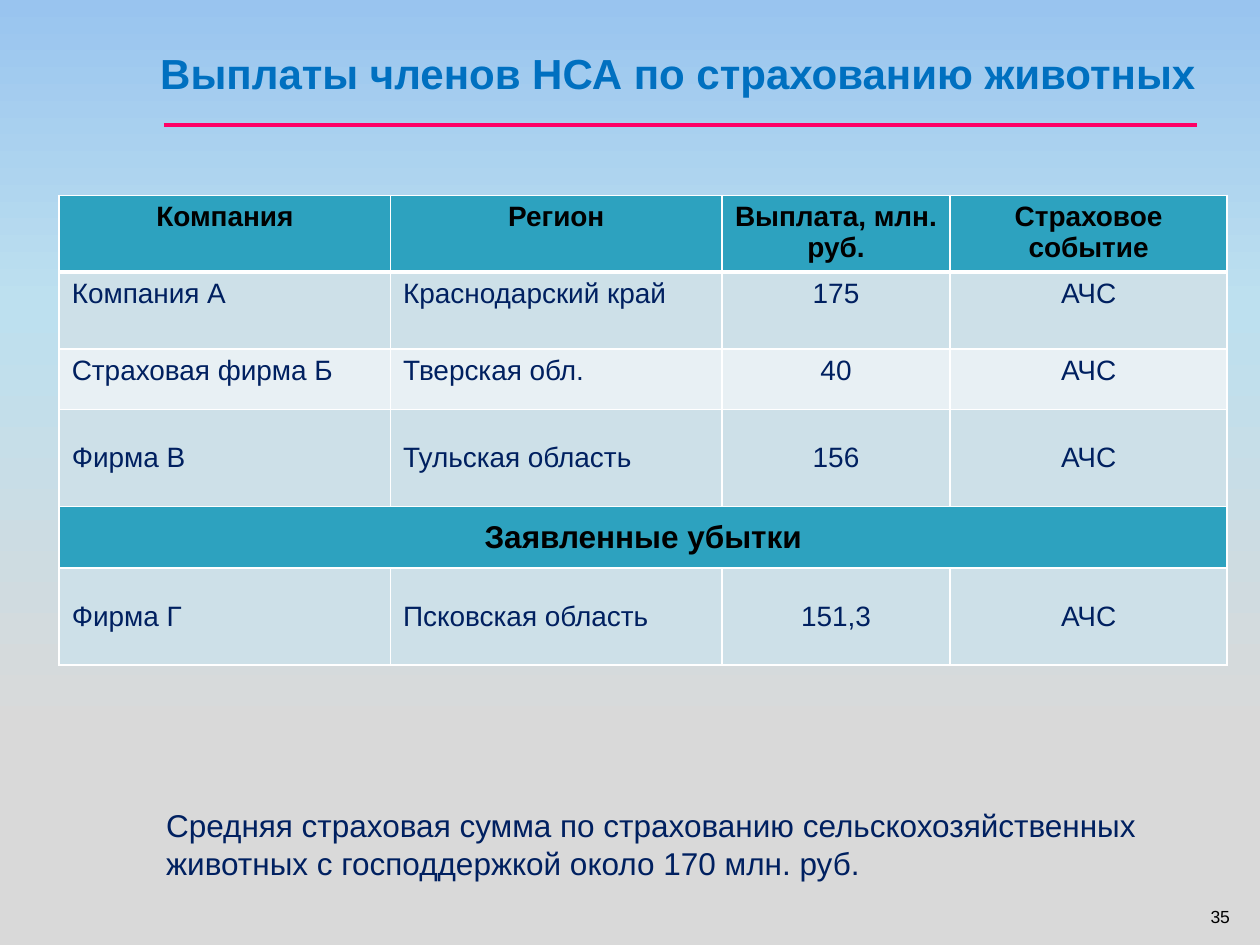
from copy import deepcopy

from lxml import etree
from pptx import Presentation
from pptx.dml.color import RGBColor
from pptx.enum import shapes, text
from pptx.oxml import ns
from pptx.util import Inches, Pt

FONT = "Arial"
BLACK = RGBColor(0x00, 0x00, 0x00)
WHITE = RGBColor(0xFF, 0xFF, 0xFF)
NAVY = RGBColor(0x00, 0x20, 0x60)
BLUE = RGBColor(0x00, 0x70, 0xC0)
PINK = RGBColor(0xFF, 0x00, 0x66)
TEAL = RGBColor(0x2D, 0xA2, 0xBF)
BAND_DARK = RGBColor(0xCD, 0xE0, 0xE8)
BAND_LIGHT = RGBColor(0xE8, 0xF0, 0xF4)
SKY = [
    (0, RGBColor(0x99, 0xC4, 0xEF)),
    (0.32, RGBColor(0xBD, 0xE0, 0xEF)),
    (0.78, RGBColor(0xD9, 0xD9, 0xD9)),
]

LEFT, CENTER, RIGHT = text.PP_ALIGN.LEFT, text.PP_ALIGN.CENTER, text.PP_ALIGN.RIGHT
TOP, MIDDLE, BOTTOM = (
    text.MSO_ANCHOR.TOP, text.MSO_ANCHOR.MIDDLE, text.MSO_ANCHOR.BOTTOM)

COLUMNS = [2.63, 2.63, 1.81, 2.2]
ROW_HEIGHTS = [0.61, 0.61, 0.48, 0.77, 0.49, 0.77]
ROWS = [
    ["Компания", "Регион", "Выплата, млн. руб.", "Страховое событие"],
    ["Компания А", "Краснодарский край", "175", "АЧС"],
    ["Страховая фирма Б", "Тверская обл.", "40", "АЧС"],
    ["Фирма В", "Тульская область", "156", "АЧС"],
    ["Заявленные убытки"],
    ["Фирма Г", "Псковская область", "151,3", "АЧС"],
]


def set_background(s):
    fill = s.background.fill
    fill.gradient()
    fill.gradient_angle = 270
    stops = s._element.find(".//" + ns.qn("a:gsLst"))
    stops.append(deepcopy(stops[0]))
    for stop, (position, color) in zip(fill.gradient_stops, SKY):
        stop.position = position
        stop.color.rgb = color


def write(tf, lines, size, color, bold=False, align=LEFT, anchor=TOP):
    tf.word_wrap = True
    tf.vertical_anchor = anchor
    for i, line in enumerate(lines):
        p = tf.add_paragraph() if i else tf.paragraphs[0]
        p.alignment = align
        r = p.add_run()
        r.text = line
        r.font.name = FONT
        r.font.size = Pt(size)
        r.font.bold = bold
        r.font.color.rgb = color


def add_title(s, title):
    sp = s.shapes.title
    sp.left, sp.top = Inches(1.14), Inches(0.33)
    sp.width, sp.height = Inches(8.48), Inches(0.5)
    write(sp.text_frame, [title], 24, BLUE, True, CENTER, MIDDLE)


def add_text(s, x, y, w, h, lines, size, color, **style):
    sp = s.shapes.add_textbox(Inches(x), Inches(y), Inches(w), Inches(h))
    write(sp.text_frame, lines, size, color, **style)


def add_rule(s, x1, x2, y):
    line = s.shapes.add_connector(
        shapes.MSO_CONNECTOR.STRAIGHT, Inches(x1), Inches(y), Inches(x2), Inches(y))
    line.line.color.rgb = PINK
    line.line.width = Pt(2.5)
    etree.SubElement(line._element.spPr, ns.qn("a:effectLst"))


def set_borders(cell, **widths):
    tc_pr = cell._tc.get_or_add_tcPr()
    for side in "LRTB":
        ln = etree.SubElement(
            tc_pr, ns.qn("a:ln" + side), w=str(Pt(widths.get(side, 1))))
        fill = etree.SubElement(ln, ns.qn("a:solidFill"))
        etree.SubElement(fill, ns.qn("a:srgbClr"), val=str(WHITE))


def add_payouts_table(s):
    table = s.shapes.add_table(
        len(ROWS), len(COLUMNS), Inches(0.47), Inches(1.55),
        Inches(sum(COLUMNS)), Inches(sum(ROW_HEIGHTS))).table
    for column, width in zip(table.columns, COLUMNS):
        column.width = Inches(width)
    for i, (row, height, values) in enumerate(zip(table.rows, ROW_HEIGHTS, ROWS)):
        row.height = Inches(height)
        section = len(values) == 1
        heading = i == 0 or section
        if section:
            table.cell(i, 0).merge(table.cell(i, len(COLUMNS) - 1))
        band = TEAL if heading else BAND_DARK if i % 2 else BAND_LIGHT
        for cell in row.cells:
            set_borders(cell, T=3 if i == 1 else 1, B=3 if i == 0 else 1)
            cell.fill.solid()
            cell.fill.fore_color.rgb = band
        for j, value in enumerate(values):
            cell = table.cell(i, j)
            write(cell.text_frame, [value], 18 if section else 16,
                  BLACK if heading else NAVY, heading,
                  CENTER if heading or j > 1 else LEFT)
            cell.vertical_anchor = MIDDLE if i > 2 else TOP


def main():
    prs = Presentation()
    prs.slide_width, prs.slide_height = Inches(10), Inches(7.5)
    s = prs.slides.add_slide(prs.slide_layouts[5])
    set_background(s)
    add_title(s, "Выплаты членов НСА по страхованию животных")
    add_rule(s, 1.3, 9.5, 0.99)
    add_payouts_table(s)
    add_text(s, 1.22, 6.35, 8.05, 0.71, [
        "Средняя страховая сумма по страхованию сельскохозяйственных",
        "животных с господдержкой около 170 млн. руб.",
    ], 18, NAVY)
    add_text(s, 9.46, 7.01, 0.4, 0.4, ["35"], 10, BLACK, align=RIGHT, anchor=BOTTOM)
    prs.save("out.pptx")


if __name__ == "__main__":
    main()
